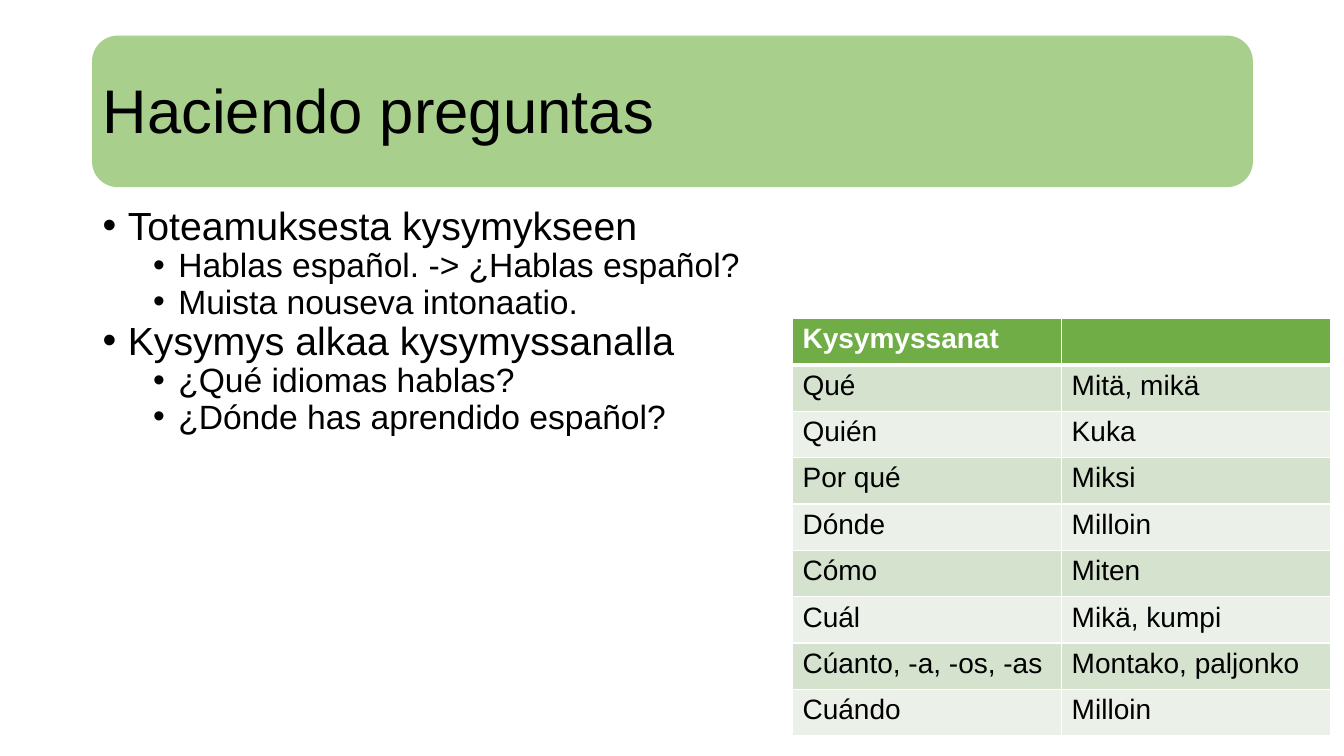
from lxml.etree import SubElement as Sub
from pptx import Presentation
from pptx.dml.color import RGBColor as RGB
from pptx.enum.shapes import MSO_SHAPE as SHAPE
from pptx.enum.text import MSO_ANCHOR as ANCHOR
from pptx.oxml import parse_xml
from pptx.oxml.ns import nsdecls, qn
from pptx.util import Inches, Pt

BLACK = RGB(0x00, 0x00, 0x00)
WHITE = RGB(0xFF, 0xFF, 0xFF)
LIME = RGB(0xA8, 0xD0, 0x8C)
GREEN = RGB(0x70, 0xAD, 0x47)
SAGE = RGB(0xD4, 0xE2, 0xCE)
PALE = RGB(0xEB, 0xF1, 0xE8)

TITLE = "Haciendo preguntas"
POINTS = [
    (0, "Toteamuksesta kysymykseen"),
    (1, "Hablas español. -> ¿Hablas español?"),
    (1, "Muista nouseva intonaatio."),
    (0, "Kysymys alkaa kysymyssanalla"),
    (1, "¿Qué idiomas hablas?"),
    (1, "¿Dónde has aprendido español?"),
]
WORDS = [
    ("Kysymyssanat", ""),
    ("Qué", "Mitä, mikä"),
    ("Quién", "Kuka"),
    ("Por qué", "Miksi"),
    ("Dónde", "Milloin"),
    ("Cómo", "Miten"),
    ("Cuál", "Mikä, kumpi"),
    ("Cúanto, -a, -os, -as", "Montako, paljonko"),
    ("Cuándo", "Milloin"),
]

WIDE, HIGH = 13.33, 7.5
LEFT, SPAN = 0.92, 11.5
COL, ROW = 2.67, 0.46
BODY = {"name": "Arial", "color": BLACK, "bold": False}
HEAD = BODY | {"color": WHITE, "bold": True}


def style(font, look, size):
    for key, val in (look | {"size": Pt(size)}).items():
        if key == "color":
            font.color.rgb = val
        else:
            setattr(font, key, val)


def box(slide, top, high, anchor):
    frame = slide.shapes.add_textbox(*map(Inches, (LEFT, top, SPAN, high))).text_frame
    frame.word_wrap = True
    frame.vertical_anchor = anchor
    return frame


def bullet(para, level):
    para.level = level
    props = para._p.get_or_add_pPr()
    props.set("marL", str(Inches(0.25 + 0.5 * level)))
    props.set("indent", str(Inches(-0.25)))
    color = Sub(props, qn("a:buClr"))
    Sub(color, qn("a:srgbClr"), val=str(BLACK))
    Sub(props, qn("a:buFont"), typeface="Arial")
    Sub(props, qn("a:buChar"), char="•")


def border(cell, widths):
    props = cell._tc.get_or_add_tcPr()
    for spot, (side, width) in enumerate(widths.items()):
        props.insert(spot, parse_xml(
            f'<a:ln{side} {nsdecls("a")} w="{Pt(width)}"><a:solidFill>'
            f'<a:srgbClr val="{WHITE}"/></a:solidFill></a:ln{side}>'))


def banner(slide):
    card = slide.shapes.add_shape(
        SHAPE.ROUNDED_RECTANGLE, *map(Inches, (LEFT, 0.36, SPAN, 1.49)))
    card.adjustments[0] = 0.167
    card.shadow.inherit = False
    card.fill.solid()
    card.fill.fore_color.rgb = LIME
    card.line.color.rgb = LIME
    card.line.width = Pt(1)
    para = box(slide, 0.4, 1.45, ANCHOR.MIDDLE).paragraphs[0]
    para.text = TITLE
    para.line_spacing = 0.9
    style(para.font, BODY, 44)


def points(slide):
    frame = box(slide, 2, 4.76, ANCHOR.TOP)
    for num, (level, text) in enumerate(POINTS):
        para = frame.add_paragraph() if num else frame.paragraphs[0]
        para.text = text
        bullet(para, level)
        para.line_spacing = 0.9
        style(para.font, BODY, 28 - 4 * level)


def words(slide):
    rows, cols = len(WORDS), len(WORDS[0])
    table = slide.shapes.add_table(
        rows, cols, *map(Inches, (7.86, 3.16, cols * COL, rows * ROW))).table
    for col in table.columns:
        col.width = Inches(COL)
    for num, pair in enumerate(WORDS):
        table.rows[num].height = Inches(ROW)
        fill = (SAGE if num % 2 else PALE) if num else GREEN
        edge = {"L": 1, "R": 1, "T": 3 if num == 1 else 1, "B": 1 if num else 3}
        for spot, text in enumerate(pair):
            cell = table.cell(num, spot)
            cell.text = text
            cell.fill.solid()
            cell.fill.fore_color.rgb = fill
            border(cell, edge)
            style(cell.text_frame.paragraphs[0].font, BODY if num else HEAD, 20)


def main():
    deck = Presentation()
    deck.slide_width, deck.slide_height = Inches(WIDE), Inches(HIGH)
    slide = deck.slides.add_slide(deck.slide_layouts[6])
    banner(slide)
    points(slide)
    words(slide)
    deck.save("out.pptx")


if __name__ == "__main__":
    main()
